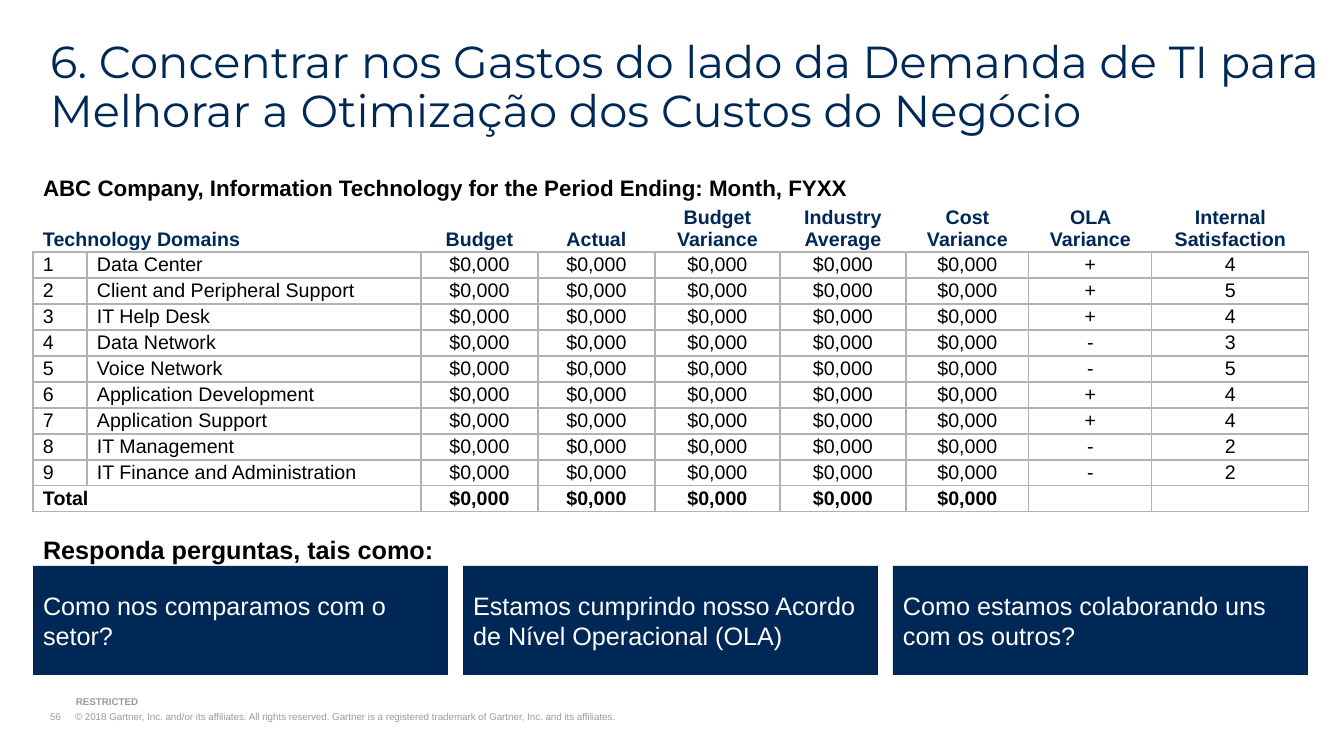
"""Build the slide on IT spending by technology domain."""
from lxml.etree import SubElement
from pptx import Presentation
from pptx.dml.color import RGBColor
from pptx.enum.shapes import MSO_SHAPE
from pptx.enum.text import MSO_ANCHOR, MSO_AUTO_SIZE, PP_ALIGN
from pptx.oxml.ns import qn
from pptx.util import Pt

TITLE = ("6. Concentrar nos Gastos do lado da Demanda de TI para "
         "Melhorar a Otimização dos Custos do Negócio")
TABLE_HEADING = "ABC Company, Information Technology for the Period Ending: Month, FYXX"
HEADERS = ["Technology Domains", "", "Budget", "Actual", "Budget Variance",
           "Industry Average", "Cost Variance", "OLA Variance", "Internal Satisfaction"]
DOMAINS = [
    ("Data Center", "+", "4"),
    ("Client and Peripheral Support", "+", "5"),
    ("IT Help Desk", "+", "4"),
    ("Data Network", "-", "3"),
    ("Voice Network", "-", "5"),
    ("Application Development", "+", "4"),
    ("Application Support", "+", "4"),
    ("IT Management", "-", "2"),
    ("IT Finance and Administration", "-", "2"),
]
AMOUNTS = ["$0,000"] * 5
COLUMN_WIDTHS = [54, 334, 117, 117, 125, 126, 123, 123, 157]
HEADER_HEIGHT, ROW_HEIGHT = 48, 26
QUESTIONS_HEADING = "Responda perguntas, tais como:"
QUESTIONS = [
    "Como nos comparamos com o setor?",
    "Estamos cumprindo nosso Acordo de Nível Operacional (OLA)",
    "Como estamos colaborando uns com os outros?",
]
RESTRICTION = "RESTRICTED"
COPYRIGHT = ("56\t© 2018 Gartner, Inc. and/or its affiliates. All rights reserved.\u00a0"
             "Gartner is a registered trademark of Gartner, Inc. and its affiliates.")
NAVY, BLACK, WHITE, RULE, GREY = "002856", "000000", "FFFFFF", "B2B2B2", "979D9D"
LEFT, QUESTION_WIDTH, QUESTION_STEP = 33, 415, 430


def px(length):
    return round(length * 914400 / 100.8)


def color(value):
    return RGBColor.from_string(value)


def write(frame, text, size=14, tint=BLACK, bold=False, font="Arial",
          align=PP_ALIGN.LEFT, anchor=MSO_ANCHOR.TOP, margins=(10, 5), spacing=None):
    frame.word_wrap = True
    frame.auto_size = MSO_AUTO_SIZE.NONE
    frame.vertical_anchor = anchor
    frame.margin_left = frame.margin_right = px(margins[0])
    frame.margin_top = frame.margin_bottom = px(margins[1])
    para = frame.paragraphs[0]
    para.alignment = align
    para.line_spacing = spacing
    if text:
        span = para.add_run()
        span.text = text
        span.font.name, span.font.size, span.font.bold = font, Pt(size), bold
        span.font.color.rgb = color(tint)
    else:
        SubElement(para._p, qn("a:endParaRPr"), sz=str(size * 100))
    return para


def add_text(page, text, left, top, width, height, **style):
    box = page.shapes.add_textbox(px(left), px(top), px(width), px(height))
    return write(box.text_frame, text, **style)


def set_borders(cell, sides):
    properties = cell._tc.get_or_add_tcPr()
    for side in "LRTB":
        line = SubElement(properties, qn(f"a:ln{side}"), w=str(Pt(1)))
        if side in sides:
            fill = SubElement(line, qn("a:solidFill"))
            SubElement(fill, qn("a:srgbClr"), val=RULE)
        else:
            SubElement(line, qn("a:noFill"))


def add_cost_table(page):
    rows = [HEADERS]
    rows += [[str(number), name, *AMOUNTS, ola, score]
             for number, (name, ola, score) in enumerate(DOMAINS, 1)]
    rows.append(["Total", "", *AMOUNTS, "", ""])
    last = len(rows) - 1
    heights = [HEADER_HEIGHT] + [ROW_HEIGHT] * last
    frame = page.shapes.add_table(len(rows), len(HEADERS), px(LEFT), px(204),
                                  px(sum(COLUMN_WIDTHS)), px(sum(heights)))
    table = frame.table
    table.first_row = table.horz_banding = False
    for column, width in zip(table.columns, COLUMN_WIDTHS):
        column.width = px(width)
    for row_index, (values, height) in enumerate(zip(rows, heights)):
        table.rows[row_index].height = px(height)
        header = row_index == 0
        for column_index, value in enumerate(values):
            cell = table.cell(row_index, column_index)
            write(cell.text_frame, value, tint=NAVY if header else BLACK,
                  bold=row_index in (0, last),
                  align=PP_ALIGN.LEFT if column_index < 2 else PP_ALIGN.CENTER)
            cell.vertical_anchor = MSO_ANCHOR.BOTTOM if header else MSO_ANCHOR.MIDDLE
            cell.margin_left = cell.margin_right = px(10)
            cell.margin_top = cell.margin_bottom = px(1)
            set_borders(cell, "B" if header else "LRTB")
            cell.fill.background()
    for row_index in (0, last):
        table.cell(row_index, 0).merge(table.cell(row_index, 1))


def add_question(page, text, left):
    box = page.shapes.add_shape(MSO_SHAPE.RECTANGLE, px(left), px(566),
                                px(QUESTION_WIDTH), px(109))
    box.shadow.inherit = False
    box.fill.solid()
    box.fill.fore_color.rgb = color(NAVY)
    box.line.fill.background()
    write(box.text_frame, text, size=18, tint=WHITE, anchor=MSO_ANCHOR.MIDDLE)


def add_footer(page):
    style = dict(size=7, tint=GREY, anchor=MSO_ANCHOR.BOTTOM, margins=(0, 0))
    para = add_text(page, COPYRIGHT, 50, 710, 805, 12, **style)
    properties = para._p.get_or_add_pPr()
    properties.set("marL", str(px(25)))
    properties.set("indent", str(-px(25)))
    tabs = SubElement(properties, qn("a:tabLst"))
    SubElement(tabs, qn("a:tab"), pos=str(px(25)), algn="l")
    add_text(page, RESTRICTION, 76, 695, 255, 12, bold=True, **style)


def main():
    deck = Presentation()
    deck.slide_width, deck.slide_height = px(1344), px(756)
    page = deck.slides.add_slide(deck.slide_layouts[5])
    title = page.shapes.title
    title.left, title.top, title.width, title.height = px(50), px(40), px(1293), px(48)
    write(title.text_frame, TITLE, size=32, tint=NAVY, font="Montserrat",
          margins=(0, 0), spacing=0.9)
    add_cost_table(page)
    for index, question in enumerate(QUESTIONS):
        add_question(page, question, LEFT + index * QUESTION_STEP)
    add_text(page, QUESTIONS_HEADING, LEFT, 529, 672, 40, size=18, bold=True)
    add_text(page, TABLE_HEADING, LEFT, 169, 880, 37, size=16, bold=True)
    add_footer(page)
    deck.save("out.pptx")


if __name__ == "__main__":
    main()
